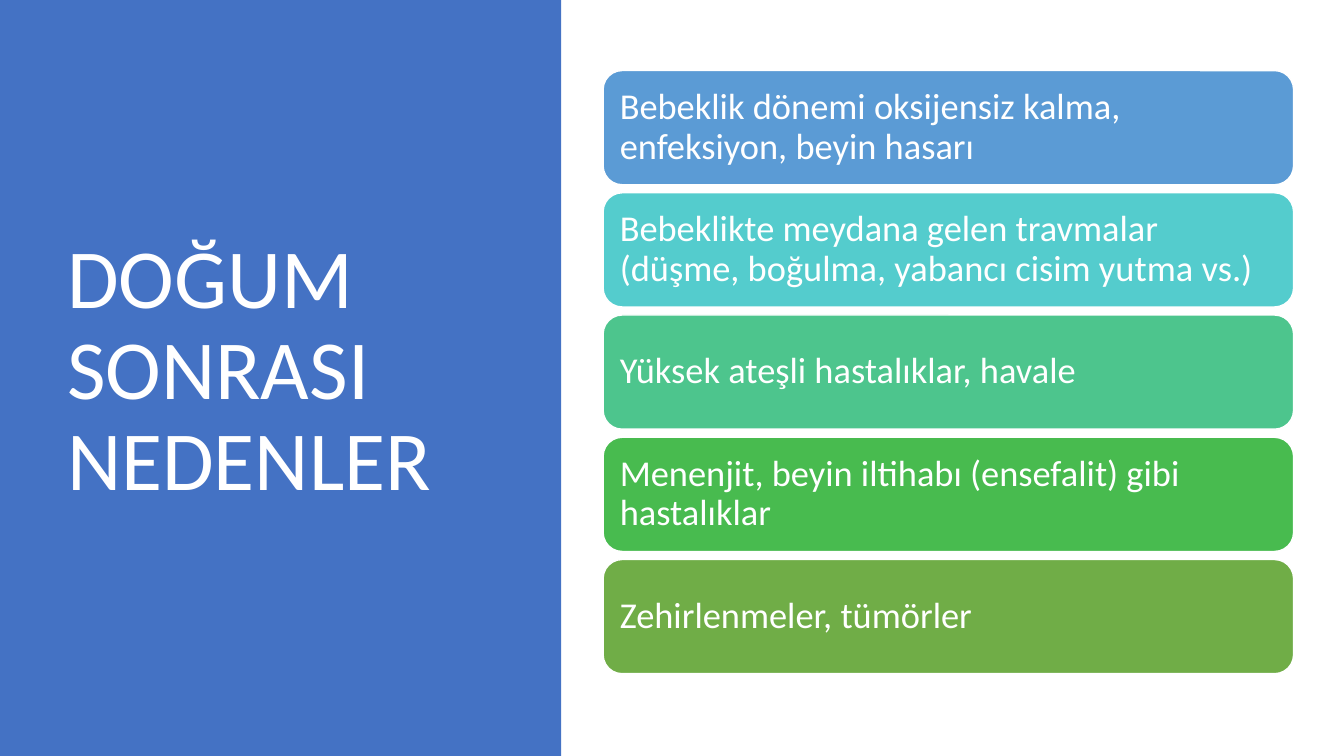
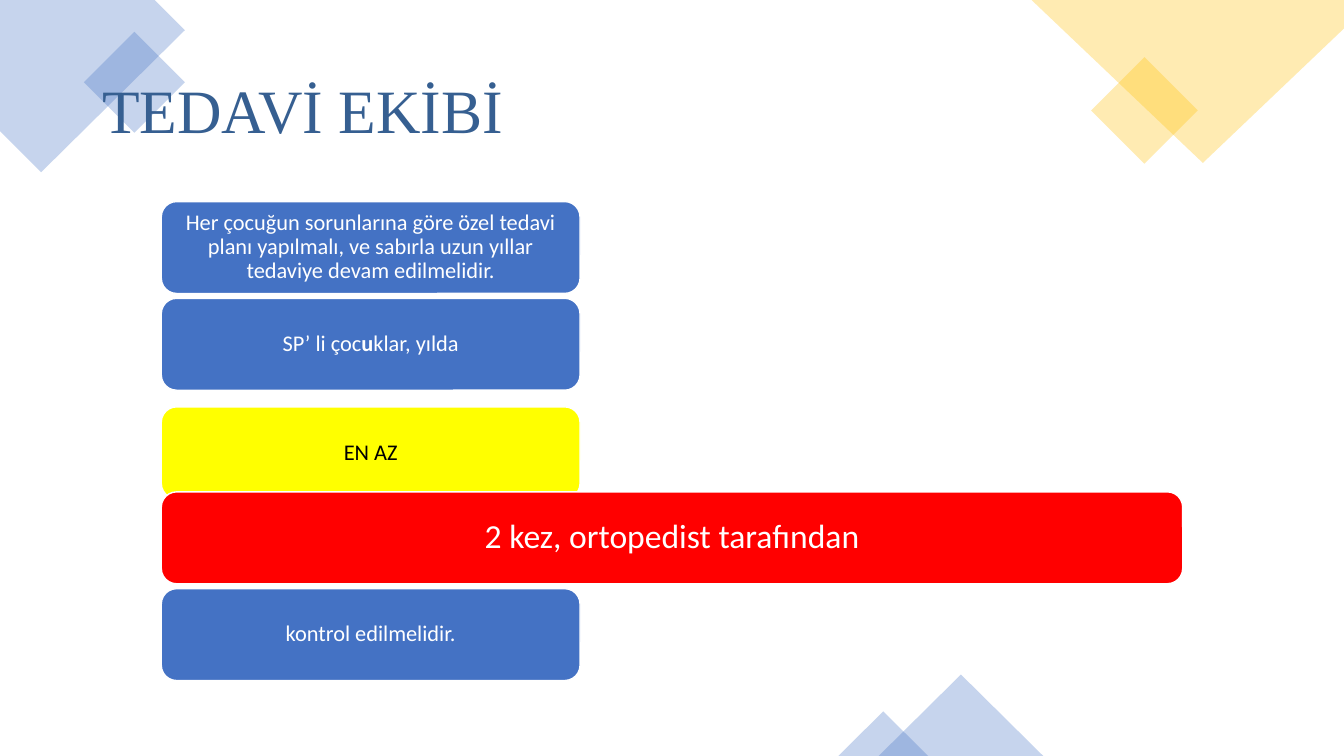
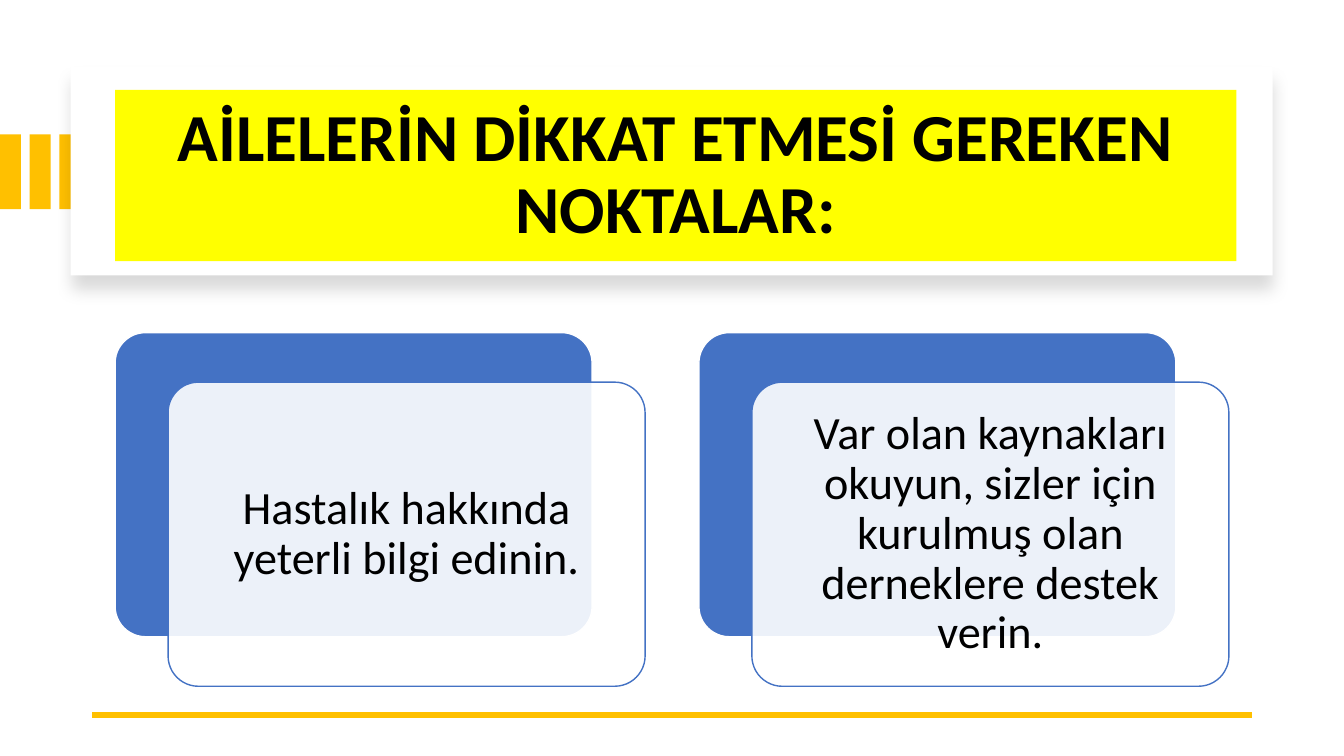
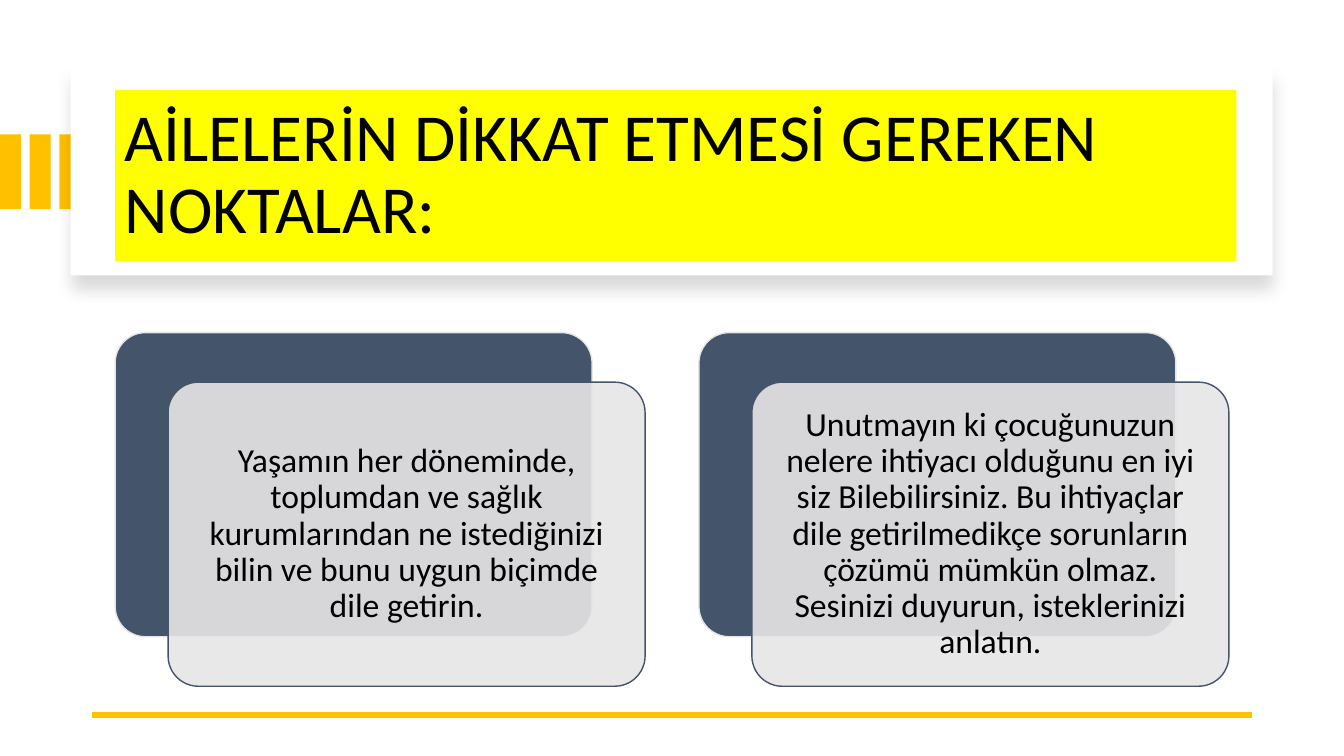
from dataclasses import dataclass

from lxml import etree
from pptx import Presentation, util as u
from pptx.dml import color
from pptx.enum import shapes, text
from pptx.oxml import ns

KIND = shapes.MSO_SHAPE
ALIGN = text.PP_ALIGN
COLS, ROWS = 160, 90
CELL = u.Inches(1) / 12


@dataclass(frozen=True)
class Theme:
    """Colours, fonts and type sizes of the deck."""
    blue: str = "4472C4"
    gold: str = "FFC000"
    yellow: str = "FFFF00"
    red: str = "FF0000"
    slate: str = "44546A"
    mist: str = "E7E6E6"
    navy: str = "365F91"
    white: str = "FFFFFF"
    black: str = "000000"
    steps: tuple = ("5B9BD5", "54CCCD", "4DC58D", "48BB4F", "70AD47")
    sans: str = "Calibri"
    serif: str = "Times New Roman"
    hero: int = 60
    head: int = 48
    title: int = 44
    large: int = 33
    item: int = 26
    body: int = 24
    small: int = 16


T = Theme()


def grid(*cells):
    """Turn grid cells into slide lengths."""
    return [u.Emu(round(c * CELL)) for c in cells]


def rgb(code):
    """Return the colour for a hex code."""
    return color.RGBColor.from_string(code)


def paint(item, fill, alpha=100, line=None):
    """Set fill, opacity and outline, without a shadow."""
    item.shadow.inherit = False
    item.fill.solid()
    item.fill.fore_color.rgb = rgb(fill)
    if alpha < 100:
        tint = item.fill._xPr.find(".//" + ns.qn("a:srgbClr"))
        etree.SubElement(tint, ns.qn("a:alpha"), val=str(alpha * 1000))
    if line:
        item.line.color.rgb = rgb(line)
        item.line.width = u.Pt(1)
    else:
        item.line.fill.background()


def block(slide, kind, box, fill, alpha=100, line=None, curve=None):
    """Add a painted preset shape."""
    item = slide.shapes.add_shape(kind, *grid(*box))
    paint(item, fill, alpha, line)
    if curve:
        item.adjustments[0] = curve
    return item


def write(item, words, size, tone, align=ALIGN.LEFT, pad=(0.1, 0.05), font=T.sans, bold=False):
    """Write one paragraph; parts between bars turn bold."""
    frame = item.text_frame
    frame.word_wrap = True
    frame.vertical_anchor = text.MSO_ANCHOR.MIDDLE
    frame.margin_left = frame.margin_right = u.Inches(pad[0])
    frame.margin_top = frame.margin_bottom = u.Inches(pad[1])
    para = frame.paragraphs[0]
    para.alignment, para.line_spacing = align, 0.9
    para.font.name, para.font.size, para.font.bold = font, u.Pt(size), bold
    para.font.color.rgb = rgb(tone)
    for i, part in enumerate(words.split("|")):
        run = para.add_run()
        run.text = part
        if i % 2:
            run.font.bold = True


def label(slide, box, words, size, tone, **style):
    """Add a title in a plain text box."""
    write(slide.shapes.add_textbox(*grid(*box)), words, size, tone, **style)


def bars(slide, box, items):
    """Fill the box with equal coloured bars."""
    left, top, wide, high = box
    gap = 0.96
    tall = (high - gap * (len(items) - 1)) / len(items)
    for i, (words, fill) in enumerate(zip(items, T.steps)):
        bar = block(slide, KIND.ROUNDED_RECTANGLE,
                    (left, top + i * (tall + gap), wide, tall), fill, line=T.white)
        write(bar, words, T.item, T.white, pad=(0.11, 0.11))


def stack(slide, box, items):
    """Stack centred steps, each with its own width and shift."""
    left, top, wide, high = box
    step = high / len(items)
    for i, (words, fill, tone, size, share, shift) in enumerate(items):
        bar = block(slide, KIND.ROUNDED_RECTANGLE,
                    (left, top + i * step + shift, wide * share, step * 0.95),
                    fill, line=T.white)
        write(bar, words, size, tone, ALIGN.CENTER, (0.07, 0.03))


def decor(slide):
    """Place the translucent corner figures."""
    def corner(points, fill):
        """Draw a clipped corner outline."""
        dots = [grid(*p) for p in points]
        pen = slide.shapes.build_freeform(*dots[0], scale=1.0)
        pen.add_line_segments(dots[1:], close=True)
        paint(pen.convert_to_shape(), fill, 30)

    corner([(0, 0), (18.4, 0), (22, 3.6), (4.9, 20.5), (0, 15.6)], T.blue)
    corner([(122.8, 0), (COLS, 0), (COLS, 3.4), (143.2, 19.4)], T.gold)
    for kind, box, fill in (
        (KIND.DIAMOND, (10, 3.8, 12, 12), T.blue),
        (KIND.DIAMOND, (129.9, 6.8, 12.7, 12.7), T.gold),
        (KIND.ISOSCELES_TRIANGLE, (104.6, 80.3, 19.6, 9.7), T.blue),
        (KIND.ISOSCELES_TRIANGLE, (99.8, 84.7, 10.7, 5.3), T.blue),
    ):
        block(slide, kind, box, fill, 30)


def shade(item):
    """Give a panel its soft lower shadow."""
    list_ = item._element.spPr.find(ns.qn("a:effectLst"))
    cast = etree.SubElement(list_, ns.qn("a:outerShdw"), blurRad="139700",
                            dist="127000", dir="5400000", algn="t", rotWithShape="0")
    tint = etree.SubElement(cast, ns.qn("a:srgbClr"), val=T.black)
    etree.SubElement(tint, ns.qn("a:alpha"), val="15000")


def banner(slide, box, words, **style):
    """Place the tabs, the shadowed panel and its yellow title."""
    left, top, wide, high = box
    for i in range(3):
        block(slide, KIND.RECTANGLE, (i * 3.54, top + 8, 2.5, 8.9), T.gold)
    shade(block(slide, KIND.RECTANGLE, box, T.white))
    head = block(slide, KIND.RECTANGLE,
                 (left + 5.3, top + 2.7, wide - 9.6, high - 4.4), T.yellow)
    write(head, words, T.head, T.black, **style)


def rule(slide, left, right, top):
    """Draw the gold line at the foot."""
    line = slide.shapes.add_connector(shapes.MSO_CONNECTOR.STRAIGHT,
                                      *grid(right, top, left, top))
    line.line.color.rgb = rgb(T.gold)
    line.line.width = u.Pt(4.5)
    etree.SubElement(line._element.spPr, ns.qn("a:effectLst"))


def cards(slide, box, items, dark, pale, size, pad):
    """Lay out cards, each a pale sheet over a dark one."""
    left, top, wide, high = box
    gap = 6.4
    span = (wide - gap * (len(items) - 1)) / len(items)
    across, down = span * 0.9, high * 0.86
    for i, words in enumerate(items):
        x = left + i * (span + gap)
        block(slide, KIND.ROUNDED_RECTANGLE, (x, top, across, down),
              dark, line=pale, curve=0.1)
        sheet = block(slide, KIND.ROUNDED_RECTANGLE,
                      (x + span - across, top + high - down, across, down),
                      pale, 90, dark, 0.1)
        write(sheet, words, size, T.black, ALIGN.CENTER, (pad, pad))


def causes(slide):
    """Build the list of causes beside a blue band."""
    block(slide, KIND.RECTANGLE, (0, 0, 66.8, ROWS), T.blue)
    label(slide, (6.8, 8.2, 50, 72.2), "DOĞUM SONRASI NEDENLER", T.hero, T.white)
    bars(slide, (71.8, 8.4, 82.2, 71.8), (
        "Bebeklik dönemi oksijensiz kalma, enfeksiyon, beyin hasarı",
        "Bebeklikte meydana gelen travmalar (düşme, boğulma, yabancı cisim yutma vs.)",
        "Yüksek ateşli hastalıklar, havale",
        "Menenjit, beyin iltihabı (ensefalit) gibi hastalıklar",
        "Zehirlenmeler, tümörler",
    ))


def team(slide):
    """Build the treatment team steps."""
    decor(slide)
    label(slide, (11, 4.8, 138, 17.4), "TEDAVİ EKİBİ", T.title, T.navy, font=T.serif)
    plain = (T.blue, T.white, T.small, 0.41, 0)
    stack(slide, (19.2, 24, 121.6, 57.6), (
        ("Her çocuğun sorunlarına göre özel tedavi planı yapılmalı, "
         "ve sabırla uzun yıllar tedaviye devam edilmelidir.", *plain),
        ("SP’ li çoc|u|klar, yılda", *plain),
        ("EN AZ", T.yellow, T.black, T.small, 0.41, 1.4),
        ("2 kez, ortopedist tarafından", T.red, T.white, T.body, 1, 0),
        ("kontrol edilmelidir.", *plain),
    ))


def advice(slide, items, dark, pale, size, pad, **style):
    """Build a slide of advice for families."""
    banner(slide, (8.4, 8, 143.1, 24.8),
           "AİLELERİN DİKKAT ETMESİ GEREKEN NOKTALAR:", **style)
    rule(slide, 11, 149, 85.1)
    cards(slide, (13.7, 39.6, 132.6, 42.1), items, dark, pale, size, pad)


def main():
    """Build and save the deck."""
    deck = Presentation()
    deck.slide_width, deck.slide_height = grid(COLS, ROWS)

    def page():
        """Add a blank slide."""
        return deck.slides.add_slide(deck.slide_layouts[6])

    causes(page())
    team(page())
    advice(page(), (
        "Hastalık hakkında yeterli bilgi edinin.",
        "Var olan kaynakları okuyun, sizler için kurulmuş olan derneklere destek verin.",
    ), T.blue, T.white, T.large, 0.14, align=ALIGN.CENTER, bold=True)
    advice(page(), (
        "Yaşamın her döneminde, toplumdan ve sağlık kurumlarından ne istediğinizi "
        "bilin ve bunu uygun biçimde dile getirin.",
        "Unutmayın ki çocuğunuzun nelere ihtiyacı olduğunu en iyi siz Bilebilirsiniz. "
        "Bu ihtiyaçlar dile getirilmedikçe sorunların çözümü mümkün olmaz. "
        "Sesinizi duyurun, isteklerinizi anlatın.",
    ), T.slate, T.mist, T.body, 0.1)
    deck.save("out.pptx")


if __name__ == "__main__":
    main()
